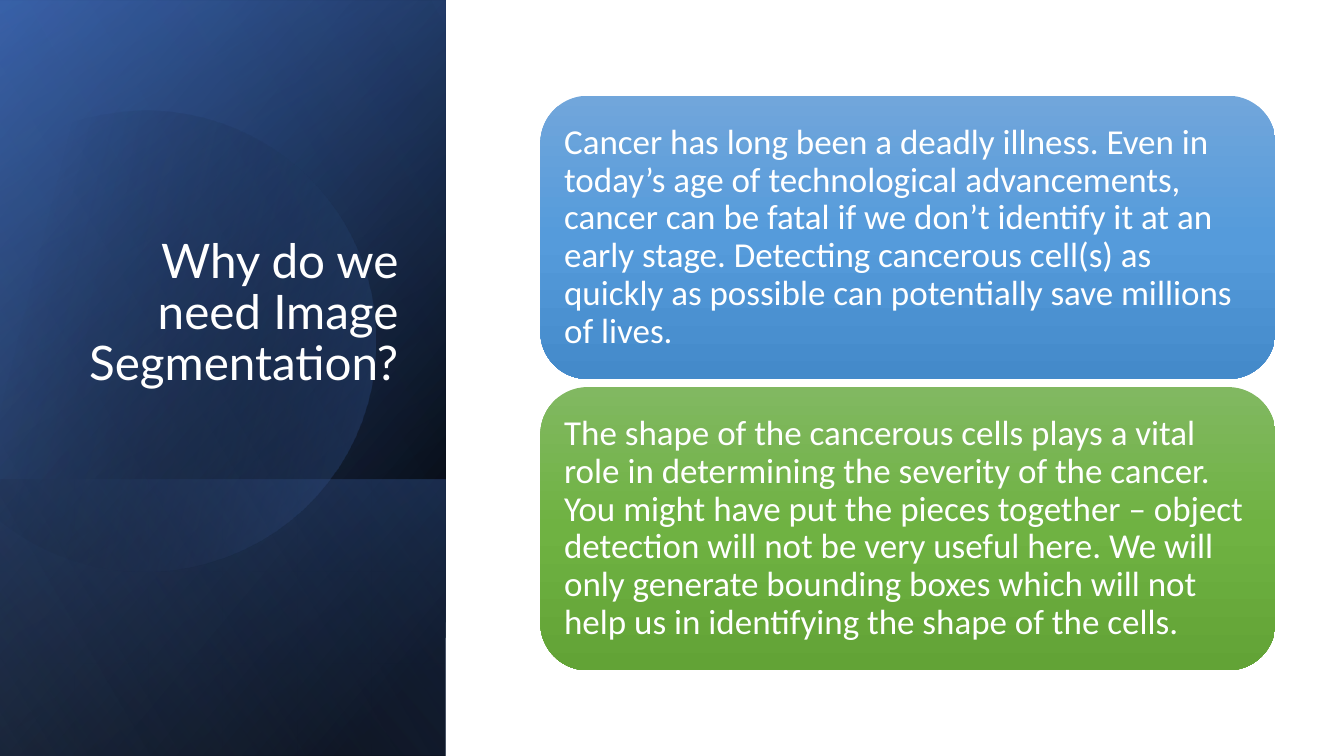
"""Build a slide on why image segmentation matters, with a gradient title panel and two cards."""
from math import cos, radians, sin

from lxml.etree import SubElement
from pptx import Presentation
from pptx.dml.color import RGBColor
from pptx.enum.shapes import MSO_SHAPE as Shape
from pptx.enum.text import MSO_ANCHOR as Anchor, PP_ALIGN as Align
from pptx.oxml.ns import qn
from pptx.util import Inches, Pt

BLACK = RGBColor(0x00, 0x00, 0x00)
WHITE = RGBColor(0xFF, 0xFF, 0xFF)
NAVY = RGBColor(0x2F, 0x55, 0x97)
BLUE = RGBColor(0x44, 0x72, 0xC4)
PALE_BLUE = RGBColor(0x8F, 0xAA, 0xDC)
CARD_BLUES = [RGBColor(0x71, 0xA6, 0xDB), RGBColor(0x55, 0x9B, 0xDB), RGBColor(0x44, 0x8A, 0xCA)]
CARD_GREENS = [RGBColor(0x81, 0xB8, 0x61), RGBColor(0x6F, 0xB2, 0x42), RGBColor(0x62, 0xA3, 0x36)]


def paint_gradient(shape, angle, stops):
    """Fill a shape with (position, colour, opacity) stops, all in percent, and no outline."""
    shape.shadow.inherit = False
    shape.line.fill.background()
    shape.fill.gradient()
    shape.fill.gradient_angle = 360 - angle
    stop_list = next(shape._element.iter(qn("a:gsLst")))
    for old_stop in list(stop_list):
        stop_list.remove(old_stop)
    for position, color, opacity in stops:
        stop = SubElement(stop_list, qn("a:gs"), pos=str(position * 1000))
        tint = SubElement(stop, qn("a:srgbClr"), val=str(color))
        if opacity < 100:
            SubElement(tint, qn("a:alpha"), val=str(opacity * 1000))


def write_text(frame, text, font_name, size):
    """Put one white paragraph into a text frame."""
    frame.word_wrap = True
    para = frame.paragraphs[0]
    para.text = text
    para.line_spacing = 0.9
    para.font.name = font_name
    para.font.size = Pt(size)
    para.font.color.rgb = WHITE
    return para


deck = Presentation()
deck.slide_width, deck.slide_height = Inches(13.33), Inches(7.5)
slide = deck.slides.add_slide(deck.slide_layouts[6])
shapes = slide.shapes

panels = [
    ((-1.54, 1.54, 7.5, 4.42), 50, [(8, BLACK, 100), (100, NAVY, 100)]),
    ((-1.54, 1.55, 7.5, 4.42), 30, [(0, BLACK, 0), (99, BLUE, 46)]),
    ((0.84, 3.92, 2.74, 4.42), 130, [(2, BLUE, 29), (100, BLACK, 30)]),
    ((-1.54, 1.54, 7.5, 4.42), 120, [(0, BLACK, 0), (99, PALE_BLUE, 11)]),
]
for place, angle, stops in panels:
    panel = shapes.add_shape(Shape.RECTANGLE, *map(Inches, place))
    panel.rotation = 90
    panel._element.spPr.find(qn("a:xfrm")).set("flipH", "1")
    paint_gradient(panel, angle, stops)

disc_start = (1.49, 1.1)
disc_curves = [
    [(2.46, 1.12), (3.35, 1.77), (3.63, 2.75)],
    [(3.98, 3.97), (3.28, 5.23), (2.07, 5.58)],
    [(1.31, 5.8), (0.53, 5.61), (-0.03, 5.14)],
    [(-0.15, 5.03)],
    [(-0.15, 1.75)],
    [(0, 1.61)],
    [(0.23, 1.42), (0.5, 1.28), (0.8, 1.19)],
    [(1.03, 1.13), (1.26, 1.1), (1.49, 1.1)],
]
outline = [disc_start]
for curve in disc_curves:
    if len(curve) == 1:
        outline += curve
        continue
    controls = [outline[-1], *curve]
    for step in range(1, 21):
        t = step / 20
        weights = [(1 - t) ** 3, 3 * t * (1 - t) ** 2, 3 * t ** 2 * (1 - t), t ** 3]
        outline.append(tuple(sum(w * point[axis] for w, point in zip(weights, controls))
                             for axis in (0, 1)))

disc_turn = 343.9
center_x, center_y = 1.585, 3.345
cosine, sine = cos(radians(-disc_turn)), sin(radians(-disc_turn))
upright = [(Inches(center_x + (x - center_x) * cosine - (y - center_y) * sine),
            Inches(center_y + (x - center_x) * sine + (y - center_y) * cosine))
           for x, y in outline]
builder = shapes.build_freeform(*upright[0])
builder.add_line_segments(upright[1:], close=True)
disc = builder.convert_to_shape()
disc.rotation = disc_turn
paint_gradient(disc, 30, [(29, BLACK, 0), (100, BLUE, 43)])
panel._element.addprevious(disc._element)

title = shapes.add_textbox(Inches(0.64), Inches(1.84), Inches(3.41), Inches(2.62))
title.text_frame.vertical_anchor = Anchor.BOTTOM
title.text_frame.margin_bottom = Inches(0.58)
write_text(title.text_frame, "Why do we need Image Segmentation?", "Lato", 34).alignment = Align.RIGHT

cards = [
    (CARD_BLUES, "Cancer has long been a deadly illness. Even in today’s age of technological "
     "advancements, cancer can be fatal if we don’t identify it at an early stage. Detecting "
     "cancerous cell(s) as quickly as possible can potentially save millions of lives."),
    (CARD_GREENS, "The shape of the cancerous cells plays a vital role in determining the severity "
     "of the cancer. You might have put the pieces together – object detection will not be very "
     "useful here. We will only generate bounding boxes which will not help us in identifying "
     "the shape of the cells."),
]
for row, (colors, text) in enumerate(cards):
    card = shapes.add_shape(Shape.ROUNDED_RECTANGLE, Inches(5.36), Inches(0.95 + row * 2.89),
                            Inches(7.29), Inches(2.81))
    paint_gradient(card, 90, [(i * 50, color, 100) for i, color in enumerate(colors)])
    frame = card.text_frame
    frame.vertical_anchor = Anchor.MIDDLE
    frame.margin_left = frame.margin_right = Inches(0.1)
    frame.margin_top = frame.margin_bottom = Inches(0.1)
    write_text(frame, text, "Calibri", 25).alignment = Align.LEFT

deck.save("out.pptx")
